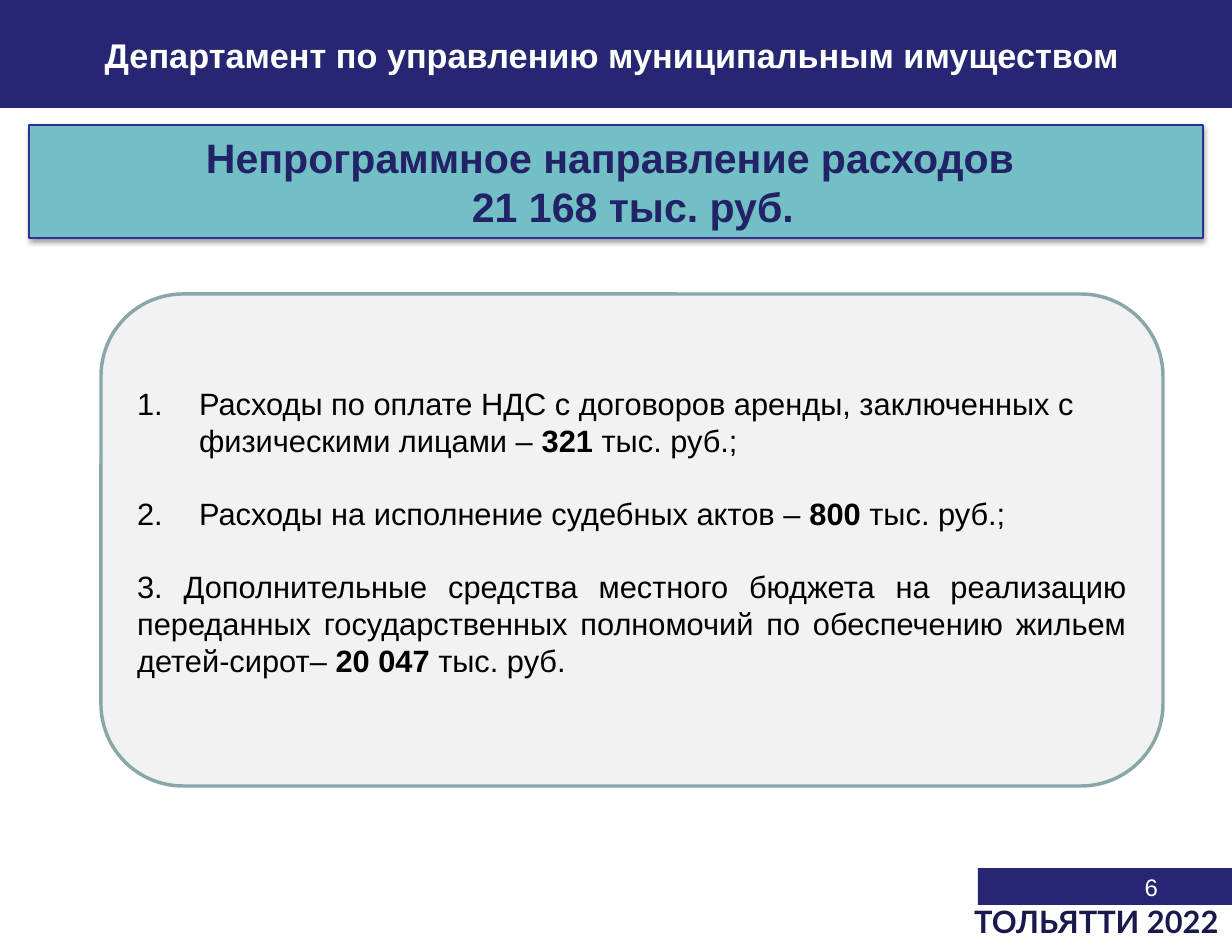
from lxml import etree
from pptx import Presentation
from pptx.dml.color import RGBColor
from pptx.enum.shapes import MSO_SHAPE
from pptx.enum.text import MSO_ANCHOR, PP_ALIGN
from pptx.oxml.ns import qn
from pptx.util import Pt

EMU_PER_PX = 7422
NAVY = RGBColor(0x26, 0x26, 0x73)
DEEP_NAVY = RGBColor(0x19, 0x19, 0x4D)
HEADING = RGBColor(0x22, 0x22, 0x67)
BORDER_BLUE = RGBColor(0x2F, 0x2F, 0x98)
TEAL = RGBColor(0x72, 0xBF, 0xC5)
GREY = RGBColor(0xF2, 0xF2, 0xF2)
GREY_TEAL = RGBColor(0x8A, 0xA6, 0xA8)
WHITE = RGBColor(0xFF, 0xFF, 0xFF)
BLACK = RGBColor(0, 0, 0)

RECT = MSO_SHAPE.RECTANGLE
ROUNDED = MSO_SHAPE.ROUNDED_RECTANGLE
LEFT, CENTER = PP_ALIGN.LEFT, PP_ALIGN.CENTER
RIGHT, JUSTIFY = PP_ALIGN.RIGHT, PP_ALIGN.JUSTIFY
TOP, MIDDLE = MSO_ANCHOR.TOP, MSO_ANCHOR.MIDDLE

EXPENSES = [
    ("Расходы по оплате НДС с договоров аренды, заключенных с физическими лицами – ",
     "321", " тыс. руб.;"),
    ("Расходы на исполнение судебных актов – ", "800", " тыс. руб.;"),
    ("3. Дополнительные средства местного бюджета на реализацию переданных "
     "государственных полномочий по обеспечению жильем детей-сирот– ",
     "20 047", " тыс. руб."),
]


def px(length):
    return length * EMU_PER_PX


def add_panel(page, kind, place, fill, line=None, width=1):
    panel = page.shapes.add_shape(kind, *map(px, place))
    panel.shadow.inherit = False
    panel.fill.solid()
    panel.fill.fore_color.rgb = fill
    if line is None:
        panel.line.fill.background()
    else:
        panel.line.color.rgb = line
        panel.line.width = Pt(width)
    return panel


def add_drop_shadow(panel):
    effects = panel._element.spPr.find(qn("a:effectLst"))
    shadow = etree.SubElement(effects, qn("a:outerShdw"), blurRad=str(Pt(3.1)),
                              dist=str(Pt(1.6)), dir="5400000", rotWithShape="0")
    color = etree.SubElement(shadow, qn("a:srgbClr"), val="000000")
    etree.SubElement(color, qn("a:alpha"), val="38000")


def prepare_frame(box, anchor):
    frame = box.text_frame
    frame.word_wrap = True
    frame.vertical_anchor = anchor
    return frame


def add_para(frame, first, align):
    para = frame.paragraphs[0] if first else frame.add_paragraph()
    para.alignment = align
    return para


def add_span(para, text, size, color, bold=False, font="Arial"):
    span = para.add_run()
    span.text = text
    span.font.name = font
    span.font.size = Pt(size)
    span.font.bold = bold
    span.font.color.rgb = color


def set_margins(para, left=0, right=0, hanging=0):
    props = para._p.get_or_add_pPr()
    props.set("marL", str(px(left)))
    props.set("marR", str(px(right)))
    props.set("indent", str(-px(hanging)))


def add_number(para, start):
    set_margins(para, left=62, hanging=62)
    etree.SubElement(para._p.get_or_add_pPr(), qn("a:buAutoNum"),
                     type="arabicPeriod", startAt=str(start))


def add_label(page, place, text, size, color, align, bold=False, font="Arial"):
    box = page.shapes.add_textbox(*map(px, place))
    para = add_para(prepare_frame(box, TOP), True, align)
    add_span(para, text, size, color, bold, font)
    return para


def add_header(page):
    header = add_panel(page, RECT, (0, 0, 1232, 108), NAVY)
    frame = prepare_frame(header, MIDDLE)
    frame.margin_top, frame.margin_bottom = px(15), px(6)
    para = add_para(frame, True, CENTER)
    para.line_spacing = 0.8
    set_margins(para, right=8)
    add_span(para, "Департамент по управлению муниципальным имуществом", 20, WHITE, True)


def add_total(page):
    total = add_panel(page, RECT, (29, 125, 1174, 113), TEAL, BORDER_BLUE, 0.75)
    add_drop_shadow(total)
    frame = prepare_frame(total, MIDDLE)
    lines = [("Непрограммное направление расходов", 0, 12), ("21 168 тыс. руб.", 34, 0)]
    for index, (text, left, right) in enumerate(lines):
        para = add_para(frame, index == 0, CENTER)
        set_margins(para, left, right)
        add_span(para, text, 24, HEADING, True)


def add_expenses(page):
    panel = add_panel(page, ROUNDED, (101, 294, 1062, 492), GREY, GREY_TEAL, 2)
    frame = prepare_frame(panel, MIDDLE)
    frame.margin_bottom = px(22)
    for index, (lead, amount, unit) in enumerate(EXPENSES):
        numbered = index < 2
        para = add_para(frame, index == 0, LEFT if numbered else JUSTIFY)
        if index:
            para.space_before = Pt(21)
        if numbered:
            add_number(para, index + 1)
        add_span(para, lead, 18, BLACK)
        add_span(para, amount, 18, BLACK, True)
        add_span(para, unit, 18, BLACK)


def main():
    deck = Presentation()
    deck.slide_width, deck.slide_height = px(1232), px(951)
    page = deck.slides.add_slide(deck.slide_layouts[6])
    add_panel(page, RECT, (978, 868, 254, 37), NAVY)
    add_label(page, (883, 866, 287, 66), "6", 14, WHITE, RIGHT)
    add_header(page)
    city = add_label(page, (962, 904, 272, 43), "ТОЛЬЯТТИ 2022", 18, DEEP_NAVY,
                     LEFT, True, "Lato")
    city.line_spacing = 0.8
    add_total(page)
    add_expenses(page)
    deck.save("out.pptx")


if __name__ == "__main__":
    main()
